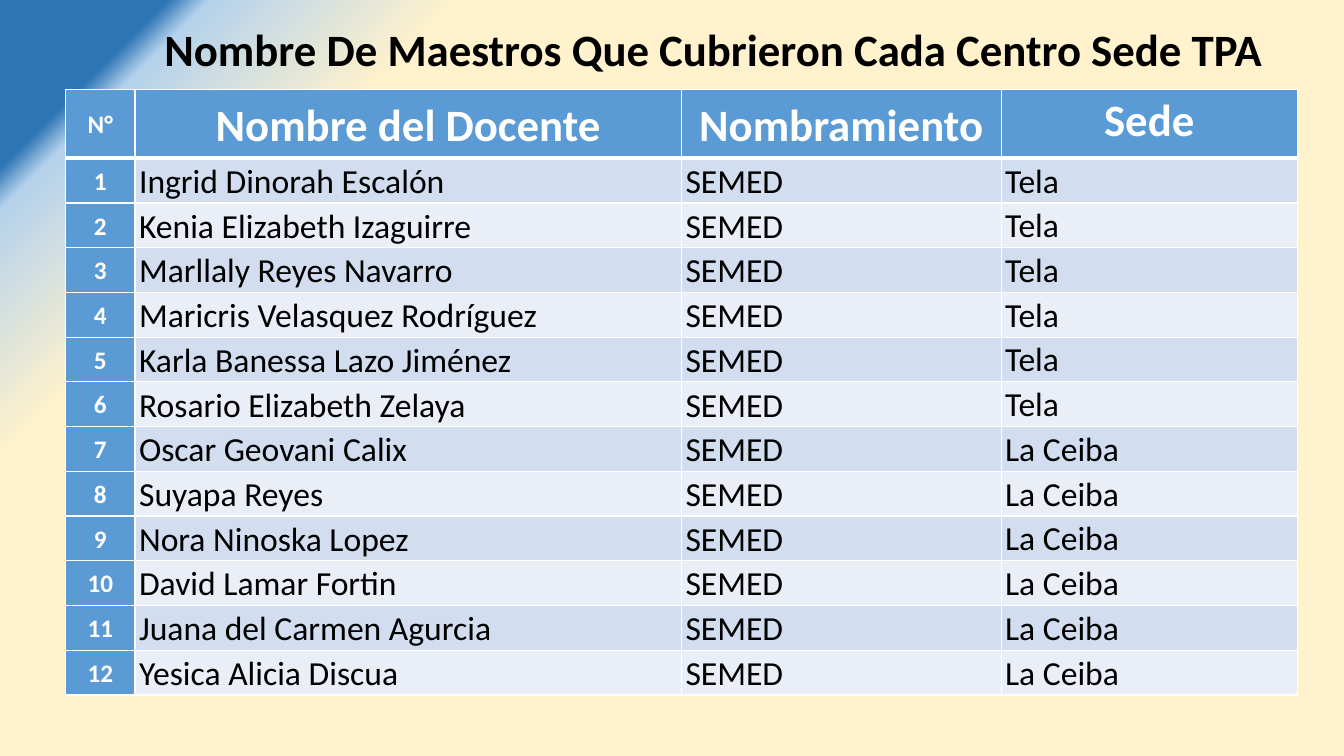
from dataclasses import dataclass

from lxml import etree
from pptx import Presentation
from pptx.dml.color import RGBColor
from pptx.enum.text import MSO_ANCHOR, PP_ALIGN
from pptx.oxml.ns import qn
from pptx.util import Inches, Pt

CENTER, LEFT = PP_ALIGN.CENTER, PP_ALIGN.LEFT
TOP, MIDDLE, BOTTOM = MSO_ANCHOR.TOP, MSO_ANCHOR.MIDDLE, MSO_ANCHOR.BOTTOM
WIDTH, HEIGHT = Inches(13.33), Inches(7.5)


@dataclass(frozen=True)
class Theme:
    font: str = "Calibri"
    ink: str = "000000"
    white: str = "FFFFFF"
    head: str = "5B9BD5"
    bands: tuple = ("D2DEEF", "EAEFF7")
    glow: tuple = ((78, "FFF2CC"), (90, "B5D2EC"), (92, "2E75B6"))
    title: int = 32
    body: int = 24
    index: int = 18
    leading: float = 1.07
    thin: int = 1
    thick: int = 3


THEME = Theme()
TITLE = "Nombre De Maestros Que Cubrieron Cada Centro Sede TPA "
HEADS = ("N°", "Nombre del Docente", "Nombramiento", "Sede")
POST = "SEMED"
SITES = {
    "Tela": (
        "Ingrid Dinorah Escalón", "Kenia Elizabeth Izaguirre",
        "Marllaly Reyes Navarro", "Maricris Velasquez Rodríguez",
        "Karla Banessa Lazo Jiménez", "Rosario Elizabeth Zelaya",
    ),
    "La Ceiba": (
        "Oscar Geovani Calix", "Suyapa Reyes", "Nora Ninoska Lopez",
        "David Lamar Fortin", "Juana del Carmen Agurcia",
        "Yesica Alicia Discua",
    ),
}
COLS = (0.69, 5.42, 3.17, 2.94)
HEAD_ROW, BODY_ROW = 0.68, 0.444


def style(para, size, color, bold, align):
    para.alignment = align
    for run in para.runs:
        font = run.font
        font.name, font.size, font.bold = THEME.font, Pt(size), bold
        font.color.rgb = RGBColor.from_string(color)


def paint(slide):
    """Fill the background with rings centred on the bottom right corner."""
    slide.background.fill.gradient()
    grad = slide.element.find(".//" + qn("a:gradFill"))
    for child in list(grad):
        grad.remove(child)
    stops = etree.SubElement(grad, qn("a:gsLst"))
    for share, color in THEME.glow:
        stop = etree.SubElement(stops, qn("a:gs"), pos=str(share * 1000))
        etree.SubElement(stop, qn("a:srgbClr"), val=color)
    ring = etree.SubElement(grad, qn("a:path"), path="circle")
    etree.SubElement(ring, qn("a:fillToRect"), l="100000", t="100000")


def add_title(slide):
    box = slide.shapes.add_textbox(
        Inches(1.17), Inches(0.17), Inches(11.92), Inches(0.64))
    frame = box.text_frame
    frame.word_wrap = True
    frame.text = TITLE
    style(frame.paragraphs[0], THEME.title, THEME.ink, True, CENTER)


def edge(cell, top, bottom):
    """Draw white borders, placed ahead of the fill as the schema asks."""
    props = cell._tc.get_or_add_tcPr()
    sides = {"L": THEME.thin, "R": THEME.thin, "T": top, "B": bottom}
    for spot, (side, width) in enumerate(sides.items()):
        line = etree.Element(qn("a:ln" + side), w=str(Pt(width)))
        fill = etree.SubElement(line, qn("a:solidFill"))
        etree.SubElement(fill, qn("a:srgbClr"), val=THEME.white)
        props.insert(spot, line)


def fill_cell(cell, text, fill, size, color, bold, align, anchor):
    cell.margin_left = cell.margin_right = Inches(0.04)
    cell.margin_top = cell.margin_bottom = 0
    cell.vertical_anchor = anchor
    cell.fill.solid()
    cell.fill.fore_color.rgb = RGBColor.from_string(fill)
    cell.text_frame.text = text
    para = cell.text_frame.paragraphs[0]
    para.line_spacing = THEME.leading
    style(para, size, color, bold, align)


def add_roster(slide):
    staff = [(name, POST, site) for site, names in SITES.items()
             for name in names]
    rows = [HEADS] + [(str(n), *row) for n, row in enumerate(staff, 1)]
    frame = slide.shapes.add_table(
        len(rows), len(COLS), Inches(0.65), Inches(0.89),
        Inches(sum(COLS)), Inches(HEAD_ROW + BODY_ROW * len(staff)))
    table = frame.table
    for col, width in zip(table.columns, COLS):
        col.width = Inches(width)
    for r, row in enumerate(rows):
        table.rows[r].height = Inches(BODY_ROW if r else HEAD_ROW)
        for c, text in enumerate(row):
            cell = table.cell(r, c)
            anchor = TOP if c == len(COLS) - 1 else MIDDLE
            if r == len(staff) and c == 1:
                anchor = BOTTOM
            if r and c:
                look = (THEME.bands[(r - 1) % 2], THEME.body,
                        THEME.ink, False, LEFT)
            else:
                size = THEME.title if c else THEME.index
                look = (THEME.head, size, THEME.white, True, CENTER)
            fill_cell(cell, text, *look, anchor)
            edge(cell, THEME.thick if r == 1 else THEME.thin,
                 THEME.thin if r else THEME.thick)


def main():
    deck = Presentation()
    deck.slide_width, deck.slide_height = WIDTH, HEIGHT
    slide = deck.slides.add_slide(deck.slide_layouts[6])
    paint(slide)
    add_title(slide)
    add_roster(slide)
    deck.save("out.pptx")


if __name__ == "__main__":
    main()
